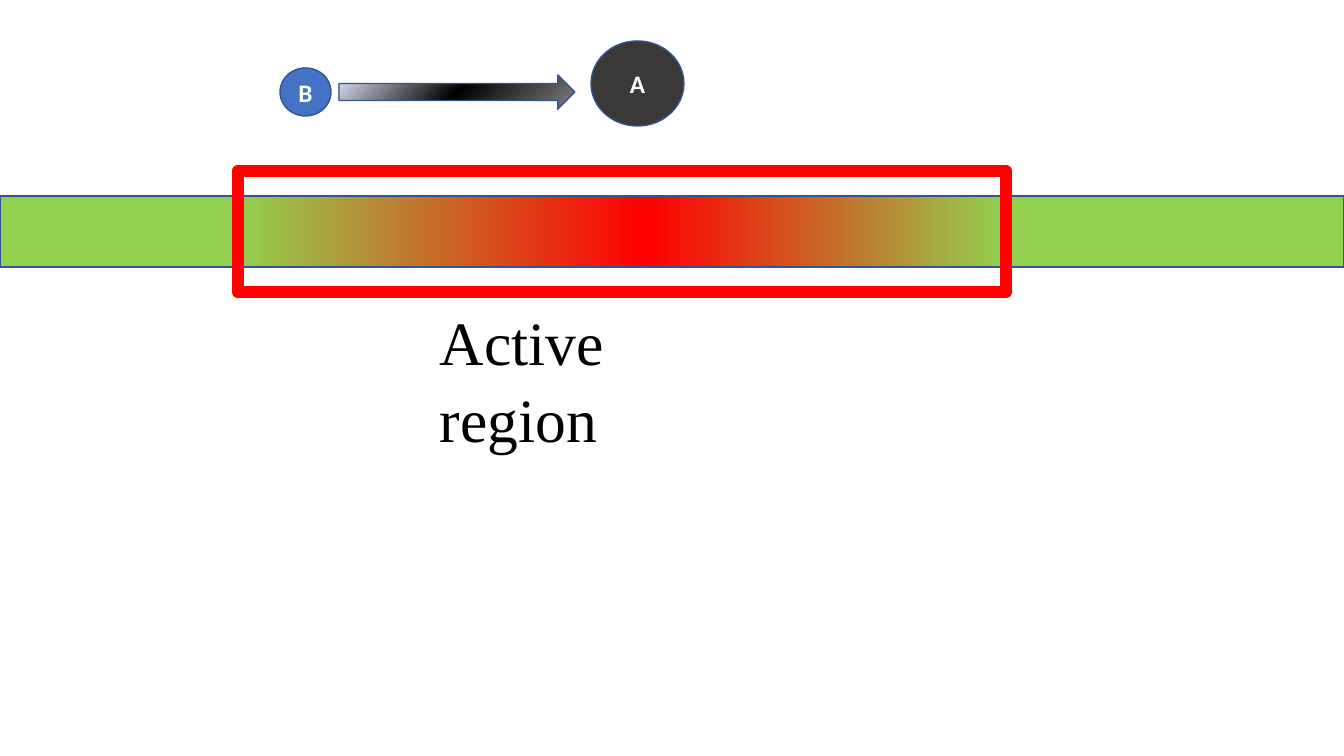
import pptx
import pptx.dml.color
import pptx.enum.shapes
import pptx.enum.text
import pptx.oxml
import pptx.oxml.ns
import pptx.util

EMU_PER_PX = 914400 / 100.8
SLIDE_SIZE = (1344, 756)
BAR_TOP, BAR_HEIGHT = 196, 71
REGION_LEFT, REGION_WIDTH = 238, 768
FRAME_MARGIN = 25

THEME = {
    "outline": "325491", "white": "FFFFFF", "black": "000000",
    "dark": "3B3838", "blue": "4472C4", "green": "92D050", "red": "FF0000",
    "thin": 1, "thick": 8.75,
    "letter": {"name": "Calibri", "size": pptx.util.Pt(18), "bold": True},
    "label": {"name": "Times New Roman", "size": pptx.util.Pt(44)},
}

# Content: gradients have stops and a direction, shapes run from back to front
ARROW_GRADIENT = (
    [(0, "808080"), (50, "000000"), (100, "E0E5F7")],
    '<a:path path="circle"><a:fillToRect l="100000" t="100000"/></a:path>',
)
REGION_GRADIENT = (
    [(0, THEME["green"]), (53, THEME["red"]), (100, THEME["green"])],
    '<a:lin ang="0" scaled="1"/>',
)
REGION_BOX = (REGION_LEFT, BAR_TOP, REGION_WIDTH, BAR_HEIGHT)
FRAME_BOX = (REGION_LEFT, BAR_TOP - FRAME_MARGIN,
             REGION_WIDTH, BAR_HEIGHT + 2 * FRAME_MARGIN)
SHAPES = [
    {"kind": "OVAL", "box": (591, 41, 93, 85), "fill": THEME["dark"], "text": "A"},
    {"kind": "OVAL", "box": (280, 68, 51, 48), "fill": THEME["blue"], "text": "B"},
    {"kind": "RIGHT_ARROW", "box": (339, 75, 236, 34), "gradient": ARROW_GRADIENT},
    {"kind": "RECTANGLE", "box": (0, BAR_TOP, SLIDE_SIZE[0], BAR_HEIGHT),
     "fill": THEME["green"]},
    {"kind": "RECTANGLE", "box": REGION_BOX, "gradient": REGION_GRADIENT},
    {"kind": "RECTANGLE", "box": FRAME_BOX, "line": (THEME["red"], THEME["thick"])},
]
LABEL = {"text": "Active region", "box": (430, 292, 323, 85)}


def px(*lengths):
    return [pptx.util.Emu(round(length * EMU_PER_PX)) for length in lengths]


def color(value):
    return pptx.dml.color.RGBColor.from_string(value)


def apply_format(target, values):
    for name, value in values.items():
        setattr(target, name, value)


def set_gradient(shape, stops, direction):
    stop_xml = "".join(
        f'<a:gs pos="{position * 1000}"><a:srgbClr val="{value}"/></a:gs>'
        for position, value in stops)
    gradient = pptx.oxml.parse_xml(
        f'<a:gradFill {pptx.oxml.ns.nsdecls("a")} rotWithShape="1">'
        f"<a:gsLst>{stop_xml}</a:gsLst>{direction}</a:gradFill>")
    geometry = shape.element.spPr.find(pptx.oxml.ns.qn("a:prstGeom"))
    geometry.addnext(gradient)


def write_text(shape, text, font_format, text_color, paragraph_format, frame_format):
    frame = shape.text_frame
    apply_format(frame, frame_format)
    paragraph = frame.paragraphs[0]
    apply_format(paragraph, paragraph_format)
    run = paragraph.add_run()
    run.text = text
    apply_format(run.font, font_format)
    run.font.color.rgb = color(text_color)


def add_shape(slide, item):
    kind = getattr(pptx.enum.shapes.MSO_SHAPE, item["kind"])
    shape = slide.shapes.add_shape(kind, *px(*item["box"]))
    shape.shadow.inherit = False
    if "gradient" in item:
        set_gradient(shape, *item["gradient"])
    elif "fill" in item:
        shape.fill.solid()
        shape.fill.fore_color.rgb = color(item["fill"])
    else:
        shape.fill.background()
    line_color, width = item.get("line", (THEME["outline"], THEME["thin"]))
    shape.line.color.rgb = color(line_color)
    shape.line.width = pptx.util.Pt(width)
    if "text" in item:
        write_text(shape, item["text"], THEME["letter"], THEME["white"],
                   {"alignment": pptx.enum.text.PP_ALIGN.CENTER},
                   {"vertical_anchor": pptx.enum.text.MSO_ANCHOR.MIDDLE})


def main():
    presentation = pptx.Presentation()
    presentation.slide_width, presentation.slide_height = px(*SLIDE_SIZE)
    slide = presentation.slides.add_slide(presentation.slide_layouts[6])

    # Particles, bar and active region
    for item in SHAPES:
        add_shape(slide, item)

    # Label under the frame
    label = slide.shapes.add_textbox(*px(*LABEL["box"]))
    write_text(label, LABEL["text"], THEME["label"], THEME["black"],
               {"line_spacing": 1.05},
               {"word_wrap": True, "margin_top": px(8)[0]})

    presentation.save("out.pptx")


if __name__ == "__main__":
    main()
